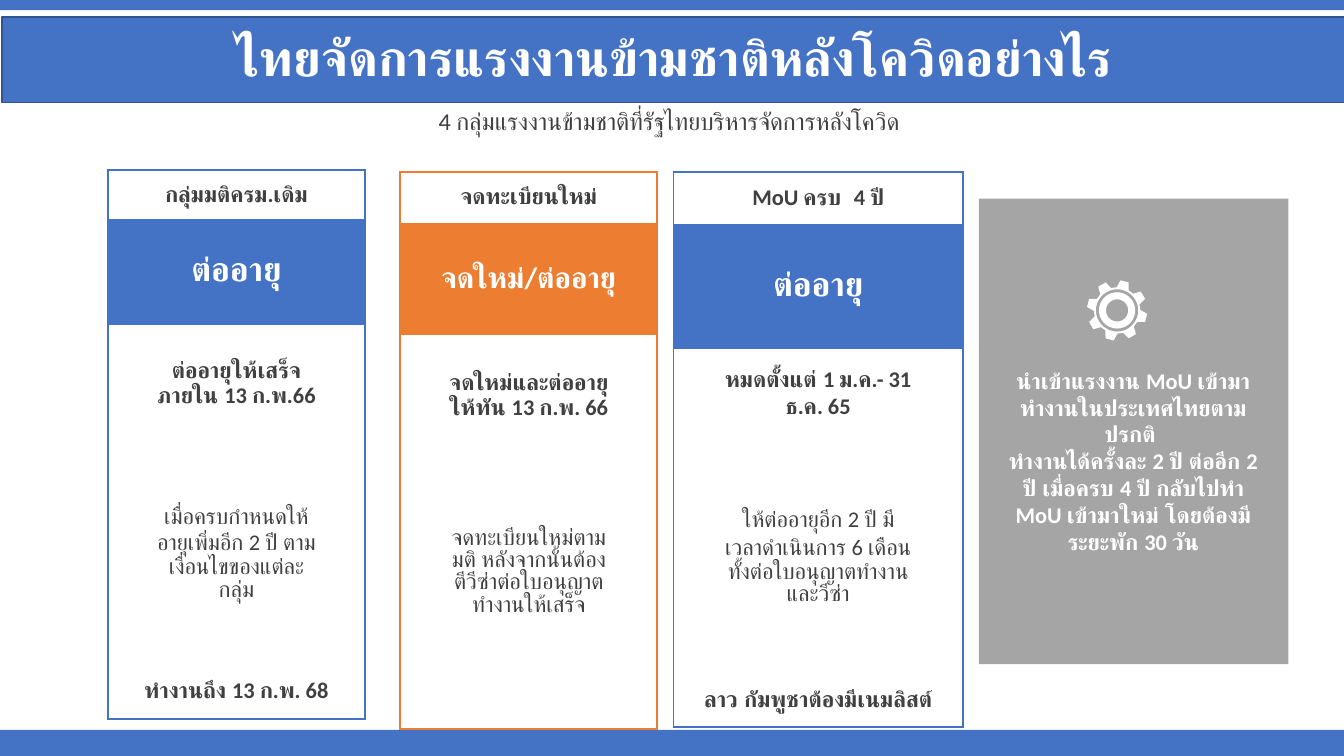
from math import cos, pi, sin

from lxml import etree
from pptx import Presentation
from pptx.dml.color import RGBColor
from pptx.enum.shapes import MSO_SHAPE
from pptx.enum.text import MSO_ANCHOR, PP_ALIGN
from pptx.oxml.ns import qn
from pptx.util import Inches, Pt

RECT = MSO_SHAPE.RECTANGLE
MID, TOP = MSO_ANCHOR.MIDDLE, MSO_ANCHOR.TOP
CENTER = PP_ALIGN.CENTER
HUE = {"blue": "4472C4", "navy": "325491", "orange": "ED7D31",
       "gray": "A5A5A5", "ink": "404040", "white": "FFFFFF"}

TITLE = "ไทยจัดการแรงงานข้ามชาติหลังโควิดอย่างไร"
SUB = "4 กลุ่มแรงงานข้ามชาติที่รัฐไทยบริหารจัดการหลังโควิด "
NOTE = ["นำเข้าแรงงาน MoU เข้ามาทำงานในประเทศไทยตามปรกติ ",
        "ทำงานได้ครั้งละ 2 ปี ต่ออีก 2 ปี เมื่อครบ 4 ปี กลับไปทำ MoU เข้ามาใหม่ "
        "โดยต้องมีระยะพัก 30 วัน"]
BARS = [(0, 7.24, 13.33, 0.26), (0, 0, 13.33, 0.1)]
GROUPS = [
    {"at": (1.07, 1.69), "hue": "blue", "size": 24, "cols": (0.33, 1.89, 0.33),
     "rows": (0.48, 1.05, 1.2, 0.72, 0.72, 0.72, 0.55),
     "text": ("กลุ่มมติครม.เดิม", "ต่ออายุ", "ต่ออายุให้เสร็จภายใน 13 ก.พ.66",
              "เมื่อครบกำหนดให้อายุเพิ่มอีก 2 ปี ตามเงื่อนไขของแต่ละกลุ่ม",
              "ทำงานถึง 13 ก.พ. 68")},
    {"at": (6.68, 1.71), "hue": "blue", "size": 24, "cols": (0.37, 2.13, 0.37),
     "rows": (0.51, 1.24, 0.88, 0.76, 0.76, 0.84, 0.51),
     "text": ("MoU ครบ  4 ปี", "ต่ออายุ", "หมดตั้งแต่ 1 ม.ค.- 31 ธ.ค. 65",
              "ให้ต่ออายุอีก 2 ปี มีเวลาดำเนินการ 6 เดือน ทั้งต่อใบอนุญาตทำงานและวีซ่า",
              "ลาว กัมพูชาต้องมีเนมลิสต์")},
    {"at": (3.97, 1.71), "hue": "orange", "size": 21, "cols": (0.33, 1.89, 0.33),
     "rows": (0.5, 1.11, 1.24, 0.74, 0.74, 0.75, 0.44),
     "text": ("จดทะเบียนใหม่", "จดใหม่/ต่ออายุ", "จดใหม่และต่ออายุให้ทัน 13 ก.พ. 66",
              "จดทะเบียนใหม่ตามมติ หลังจากนั้นต้องตีวีซ่าต่อใบอนุญาตทำงานให้เสร็จ", "")},
]
PAD = {"margin_left": 0.13, "margin_right": 0.13, "margin_top": 0.07, "margin_bottom": 0.07}
GEAR = {"mid": (11.08, 3.08), "teeth": 8, "turn": 14.5,
        "tooth": ((-15.5, 0.23), (-8, 0.3), (8, 0.3), (15.5, 0.23)),
        "rings": (0.21, 0.18, 0.11)}


def tint(key):
    return RGBColor.from_string(HUE[key])


def paint(item, key):
    item.fill.solid()
    item.fill.fore_color.rgb = tint(key)


def write(frame, lines, size, hue, bold=True, **form):
    for i, line in enumerate(lines):
        para = frame.paragraphs[0] if i == 0 else frame.add_paragraph()
        for key, val in {"alignment": CENTER, **form}.items():
            setattr(para, key, val)
        run = para.add_run()
        run.text = line
        for key, val in {"name": "Calibri", "size": Pt(size), "bold": bold}.items():
            setattr(run.font, key, val)
        run.font.color.rgb = tint(hue)


def block(slide, at, hue, edge=None):
    shape = slide.shapes.add_shape(RECT, *map(Inches, at))
    shape.shadow.inherit = False
    paint(shape, hue)
    if edge:
        shape.line.color.rgb = tint(edge)
        shape.line.width = Pt(1)
    else:
        shape.line.fill.background()
    return shape


def label(slide, at, anchor):
    frame = slide.shapes.add_textbox(*map(Inches, at)).text_frame
    frame.word_wrap = True
    frame.vertical_anchor = anchor
    return frame


def border(cell, sides, hue):
    props = cell._tc.get_or_add_tcPr()
    for i, side in enumerate("LRTB"):
        line = etree.Element(qn("a:ln" + side), w=str(Pt(1.5)))
        if side in sides:
            fill = etree.SubElement(line, qn("a:solidFill"))
            etree.SubElement(fill, qn("a:srgbClr"), val=HUE[hue])
        else:
            etree.SubElement(line, qn("a:noFill"))
        props.insert(i, line)


def panel(slide, group):
    cols, rows, hue = group["cols"], group["rows"], group["hue"]
    last = len(rows) - 1
    size = sum(cols), sum(rows)
    table = slide.shapes.add_table(
        len(rows), len(cols), *map(Inches, group["at"] + size)).table
    table.first_row = table.horz_banding = False
    for col, wide in zip(table.columns, cols):
        col.width = Inches(wide)
    for row, high in zip(table.rows, rows):
        row.height = Inches(high)
    wide = (0, 1, last)
    for r in range(len(rows)):
        for c in range(3):
            cell = table.cell(r, c)
            paint(cell, hue if r == 1 else "white")
            span = r in wide
            sides = ("L" if c == 0 else "") + ("R" if c == 2 or span and c == 0 else "")
            sides += {0: "T", last: "B"}.get(r, "")
            border(cell, sides, hue)
            for key, val in PAD.items():
                setattr(cell, key, Inches(val))
            cell.vertical_anchor = MID
    for r in wide:
        table.cell(r, 0).merge(table.cell(r, 2))
    table.cell(3, 1).merge(table.cell(5, 1))
    for (r, c), text in zip(((0, 0), (1, 0), (2, 1), (3, 1), (last, 0)), group["text"]):
        if text:
            write(table.cell(r, c).text_frame, [text], group["size"] if r == 1 else 16,
                  "white" if r == 1 else "ink", r != 3)


def spot(deg, far):
    x, y = GEAR["mid"]
    turn = deg * pi / 180
    return Inches(x + far * sin(turn)), Inches(y - far * cos(turn))


def gear(slide):
    step = 360 / GEAR["teeth"]
    paths = [[spot(GEAR["turn"] + i * step + deg, far)
              for i in range(GEAR["teeth"]) for deg, far in GEAR["tooth"]]]
    paths += [[spot(deg, far) for deg in range(0, 360, 10)] for far in GEAR["rings"]]
    form = slide.shapes.build_freeform(*paths[0][0])
    for i, points in enumerate(paths):
        if i:
            form.move_to(*points[0])
        form.add_line_segments(points[1:], close=True)
    shape = form.convert_to_shape()
    shape.shadow.inherit = False
    paint(shape, "white")
    shape.line.fill.background()


def main():
    deck = Presentation()
    deck.slide_width, deck.slide_height = Inches(13.33), Inches(7.5)
    slide = deck.slides.add_slide(deck.slide_layouts[6])
    for at in BARS:
        block(slide, at, "blue")
    head = block(slide, (0.02, 0.17, 13.33, 0.85), "blue", "navy").text_frame
    head.vertical_anchor = MID
    write(head, [TITLE], 36, "white", line_spacing=0.9)
    write(label(slide, (0, 1.02, 13.33, 0.42), MID), [SUB], 17.3, "ink", False,
          line_spacing=0.7)
    for group in GROUPS:
        panel(slide, group)
    block(slide, (9.71, 1.97, 3.07, 4.62), "gray")
    gear(slide)
    write(label(slide, (9.87, 3.59, 2.74, 2.74), TOP), NOTE, 16, "white")
    deck.save("out.pptx")


if __name__ == "__main__":
    main()
